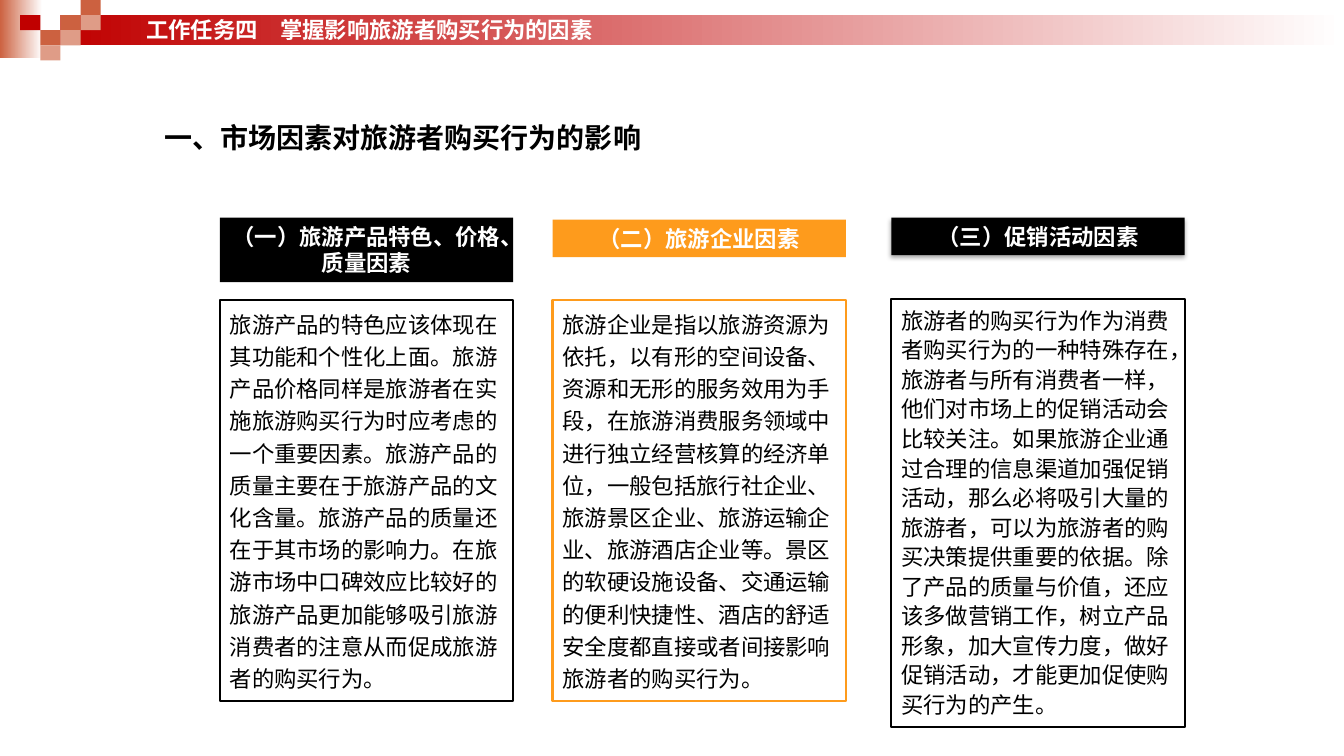
from dataclasses import dataclass

from lxml.etree import SubElement
from pptx import Presentation
from pptx.dml.color import RGBColor
from pptx.enum.shapes import MSO_SHAPE
from pptx.enum.text import MSO_ANCHOR, MSO_AUTO_SIZE, PP_ALIGN
from pptx.oxml.ns import qn
from pptx.shapes.autoshape import Shape
from pptx.slide import Slide
from pptx.text.text import TextFrame
from pptx.util import Inches, Pt

COLORS = {
    "red": "C00000",
    "rust": "CC6140",
    "pink": "DF9C87",
    "orange": "FE9B1C",
    "black": "000000",
    "white": "FFFFFF",
}
FONT = "Noto Sans CJK SC"
COLUMN, ROW = Inches(0.2), Inches(0.15)
SLIDE_COLUMNS, SLIDE_ROWS = 66.65, 50
CARD_COLUMNS = 14.55


@dataclass(frozen=True)
class Box:
    """A rectangle in grid columns and rows."""
    column: float
    row: float
    columns: float = 1
    rows: float = 1


@dataclass(frozen=True)
class Tile:
    box: Box
    color: str
    fades: bool = False


@dataclass(frozen=True)
class Card:
    heading: str
    paragraphs: tuple[str, ...]
    color: str
    column: float
    heading_row: float
    heading_rows: float
    body_row: float
    body_rows: float
    line_spacing: float = 1.2
    shadow: bool = False


TILES = (
    Tile(Box(0, 0, 2.1, 3.87), "rust", fades=True),
    Tile(Box(3, 1, SLIDE_COLUMNS - 3, 2), "red", fades=True),
    Tile(Box(3, 1), "rust"),
    Tile(Box(4, 0), "rust"),
    Tile(Box(4, 1), "pink"),
    Tile(Box(2, 2), "rust"),
    Tile(Box(1, 1), "red"),
    Tile(Box(3, 2), "pink"),
    Tile(Box(2, 3), "pink"),
)

CARDS = (
    Card(
        "（一）旅游产品特色、价格、质量因素",
        ("旅游产品的特色应该体现在其功能和个性化上面。旅游产品价格同样是旅游者在实施旅游购买行为时应考虑的"
         "一个重要因素。旅游产品的质量主要在于旅游产品的文化含量。旅游产品的质量还在于其市场的影响力。"
         "在旅游市场中口碑效应比较好的旅游产品更加能够吸引旅游消费者的注意从而促成旅游者的购买行为。",),
        "black", 10.9, 14.4, 4.27, 19.87, 26.47,
    ),
    Card(
        "（二）旅游企业因素",
        ("旅游企业是指以旅游资源为依托，以有形的空间设备、资源和无形的服务效用为手段，在旅游消费服务领域中"
         "进行独立经营核算的经济单位，一般包括旅行社企业、旅游景区企业、旅游运输企业、旅游酒店企业等。"
         "景区的软硬设施设备、交通运输的便利快捷性、酒店的舒适安全度都直接或者间接影响旅游者的购买行为。",),
        "orange", 27.4, 14.53, 2.47, 19.87, 26.47,
    ),
    Card(
        "（三）促销活动因素",
        ("旅游者的购买行为作为消费者购买行为的一种特殊存在，旅游者与所有消费者一样，",
         "他们对市场上的促销活动会比较关注。如果旅游企业通过合理的信息渠道加强促销活动，那么必将吸引大量的"
         "旅游者，可以为旅游者的购买决策提供重要的依据。除了产品的质量与价值，还应该多做营销工作，"
         "树立产品形象，加大宣传力度，做好促销活动，才能更加促使购买行为的产生。"),
        "black", 44.2, 14.4, 2.47, 19.8, 28.27, 1.1, True,
    ),
)


def rgb(name: str) -> RGBColor:
    return RGBColor.from_string(COLORS[name])


def place(box: Box) -> tuple[int, int, int, int]:
    """Turn grid units into left, top, width and height."""
    return (round(box.column * COLUMN), round(box.row * ROW),
            round(box.columns * COLUMN), round(box.rows * ROW))


def add_rectangle(slide: Slide, box: Box) -> Shape:
    shape = slide.shapes.add_shape(MSO_SHAPE.RECTANGLE, *place(box))
    shape.shadow.inherit = False
    shape.fill.background()
    shape.line.fill.background()
    return shape


def fill_solid(shape: Shape, color: str) -> None:
    shape.fill.solid()
    shape.fill.fore_color.rgb = rgb(color)


def add_tile(slide: Slide, tile: Tile) -> None:
    shape = add_rectangle(slide, tile.box)
    if not tile.fades:
        fill_solid(shape, tile.color)
        return
    shape.fill.gradient()
    shape.fill.gradient_angle = 0
    for stop, color in zip(shape.fill.gradient_stops, (tile.color, "white")):
        stop.color.rgb = rgb(color)


def write(frame: TextFrame, paragraphs: tuple[str, ...], color: str = "black",
          size: float = 16, bold: bool = False, latin: str = FONT,
          align: PP_ALIGN = PP_ALIGN.LEFT, line_spacing: float = 1.0,
          space_after: float = 0) -> None:
    frame.text = "\n".join(paragraphs)
    frame.word_wrap = True
    frame.auto_size = MSO_AUTO_SIZE.SHAPE_TO_FIT_TEXT
    frame.vertical_anchor = MSO_ANCHOR.TOP
    for paragraph in frame.paragraphs:
        paragraph.alignment = align
        paragraph.line_spacing = line_spacing
        paragraph.space_after = Pt(space_after)
        for run in paragraph.runs:
            run.font.size, run.font.bold = Pt(size), bold
            run.font.color.rgb = rgb(color)
            run.font.name = latin
            SubElement(run.font._element, qn("a:ea"), typeface=FONT)


def add_drop_shadow(shape: Shape) -> None:
    effects = shape._element.spPr.find(qn("a:effectLst"))
    shadow = SubElement(effects, qn("a:outerShdw"), blurRad=str(Pt(3.1)),
                        dist=str(Pt(1.8)), dir="5400000", rotWithShape="0")
    shade = SubElement(shadow, qn("a:srgbClr"), val=COLORS["black"])
    SubElement(shade, qn("a:alpha"), val="35000")


def add_card(slide: Slide, card: Card) -> None:
    heading = add_rectangle(
        slide, Box(card.column, card.heading_row, CARD_COLUMNS, card.heading_rows))
    fill_solid(heading, card.color)
    if card.shadow:
        add_drop_shadow(heading)
    write(heading.text_frame, (card.heading,), "white", bold=True,
          align=PP_ALIGN.CENTER, space_after=6)

    body = add_rectangle(
        slide, Box(card.column, card.body_row, CARD_COLUMNS, card.body_rows))
    body.line.color.rgb = rgb(card.color)
    body.line.width = Pt(1.5)
    write(body.text_frame, card.paragraphs, line_spacing=card.line_spacing)


def add_titles(slide: Slide) -> None:
    title = slide.shapes.title
    title.left, title.top, title.width, title.height = place(Box(6.75, 0.73, 25.8, 2.47))
    write(title.text_frame, ("工作任务四　掌握影响旅游者购买行为的因素",), "white",
          bold=True, latin="Arial")
    # The title belongs in front of the header band.
    title._element.getparent().append(title._element)

    section = slide.shapes.add_textbox(*place(Box(7.65, 7.67, 28.4, 2.87)))
    write(section.text_frame, ("一、市场因素对旅游者购买行为的影响",), size=20, bold=True)


def main() -> None:
    presentation = Presentation()
    presentation.slide_width = round(SLIDE_COLUMNS * COLUMN)
    presentation.slide_height = SLIDE_ROWS * ROW
    slide = presentation.slides.add_slide(presentation.slide_layouts.get_by_name("Title Only"))
    for tile in TILES:
        add_tile(slide, tile)
    add_titles(slide)
    for card in CARDS:
        add_card(slide, card)
    presentation.save("out.pptx")


if __name__ == "__main__":
    main()
